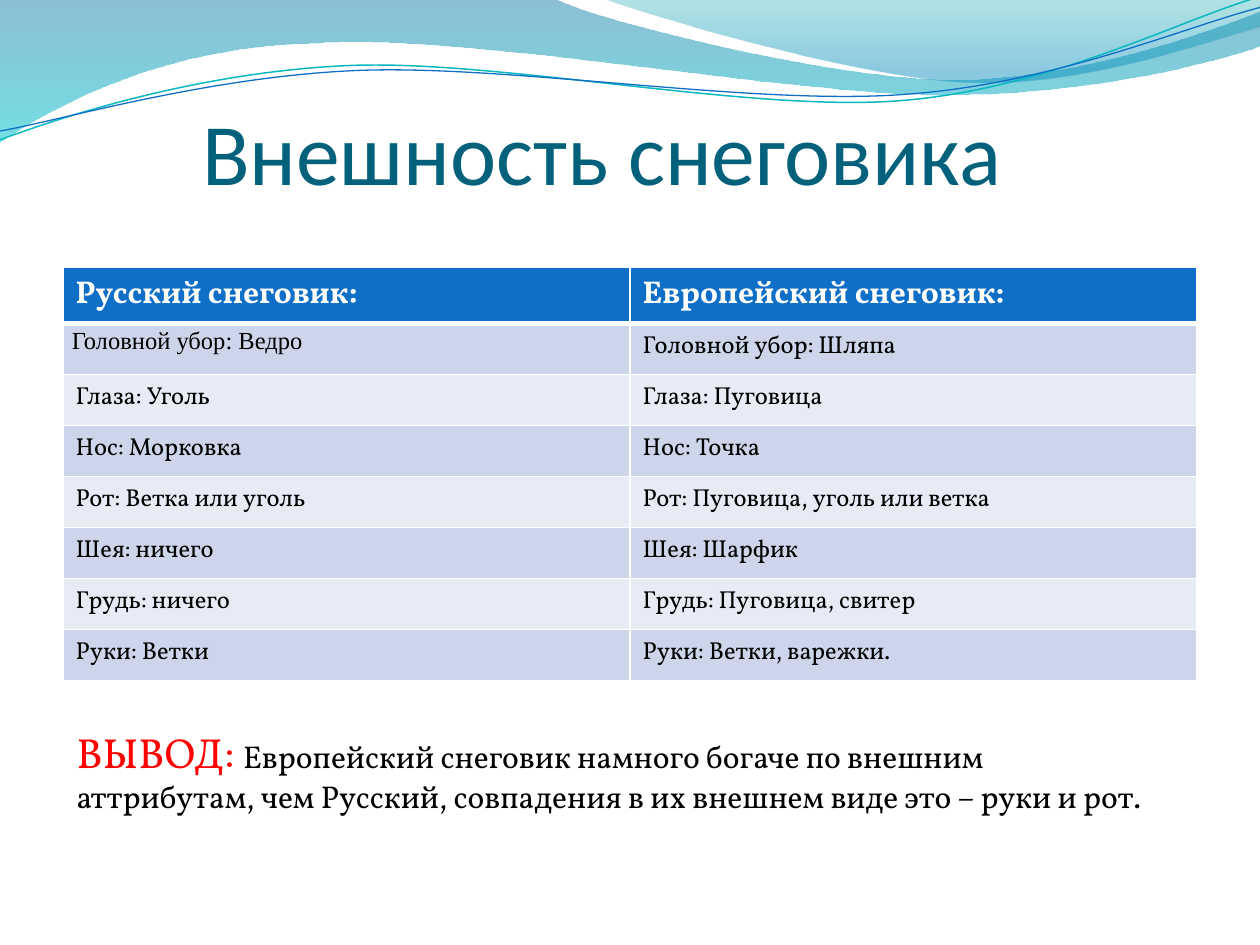
import math
from lxml import etree
from pptx import Presentation, util as u
from pptx.dml.color import RGBColor
from pptx.enum import text
from pptx.oxml import ns

WHITE, BLACK, RED = RGBColor(255, 255, 255), RGBColor(0, 0, 0), RGBColor(255, 0, 0)
TITLE_TEAL, HEADER_BLUE = RGBColor(0x04, 0x61, 0x7B), RGBColor(0x0F, 0x6F, 0xC6)
LINE_TEAL = RGBColor(0x0A, 0xB8, 0xBF)
BANDS = RGBColor(0xCC, 0xD5, 0xEA), RGBColor(0xE7, 0xEB, 0xF5)
DEEP_BLUE, CYAN = RGBColor(0, 0x74, 0xA1), RGBColor(0, 0xC6, 0xCF)
SEA_GREEN, SKY_BLUE = RGBColor(0, 0xA1, 0xA9), RGBColor(0, 0x8B, 0xBF)
FONT = "Vollkorn"

# Content
TITLE = "Внешность снеговика"
SNOWMEN = [
    ("Русский снеговик:", "Европейский снеговик:"),
    ("Головной убор: Ведро", "Головной убор: Шляпа"),
    ("Глаза: Уголь", "Глаза: Пуговица"),
    ("Нос: Морковка", "Нос: Точка"),
    ("Рот: Ветка или уголь", "Рот: Пуговица, уголь или ветка"),
    ("Шея: ничего", "Шея: Шарфик"),
    ("Грудь: ничего", "Грудь: Пуговица, свитер"),
    ("Руки: Ветки", "Руки: Ветки, варежки."),
]
CONCLUSION = [
    ("ВЫВОД: ", 24, RED),
    ("Европейский снеговик намного богаче по внешним аттрибутам, чем Русский, "
     "совпадения в их внешнем виде это – руки и рот.", 18, BLACK),
]

# Waves: steps of one point (line) or three points (curve), in inches
FILLED_WAVES = [
    ([[(0, 0)], [(4.4, -0.01)],
      [(4.76, 0.17), (6.64, 0.63), (7.58, 0.63)], [(8.53, 0.63), (9.58, 0.26), (10, 0.09)],
      [(10.01, 0.36)],
      [(9.83, 0.44), (8.7, 0.76), (7.46, 0.75)], [(6.22, 0.75), (3.82, 0.28), (2.57, 0.34)],
      [(1.29, 0.36), (0.46, 0.83), (-0.01, 1.13)], [(0, 0)]],
     [(0, DEEP_BLUE, 45), (1, CYAN, 55)]),
    ([[(4.79, -0.01)],
      [(5.09, 0.11), (6.82, 0.62), (7.69, 0.65)], [(8.56, 0.69), (9.61, 0.32), (10, 0.21)],
      [(10, 0)], [(4.79, -0.01)]],
     [(0, SEA_GREEN, 30), (0.8, SKY_BLUE, 45)]),
]
LINE_WAVES = [
    ([[(0, 1.11)], [(0.48, 0.93), (1.58, 0.57), (2.77, 0.52)],
      [(3.95, 0.47), (5.93, 0.89), (7.13, 0.8)], [(8.33, 0.71), (9.38, 0.15), (9.98, -0.02)]],
     (4.99, 0.57), LINE_TEAL, 0.85),
    ([[(0, 1.04)], [(0.47, 0.96), (1.64, 0.61), (2.83, 0.56)],
      [(4.03, 0.51), (5.97, 0.84), (7.17, 0.75)], [(8.36, 0.67), (9.41, 0.21), (10, 0.06)]],
     (5, 0.59), HEADER_BLUE, 0.75),
]
TILT = 2.7  # degrees, counter-clockwise


def level(outline, center):
    """Turn a tilted outline back to the horizontal."""
    (cx, cy), angle = center, math.radians(TILT)
    cos, sin = math.cos(angle), math.sin(angle)
    return [[(cx + (x - cx) * cos - (y - cy) * sin, cy + (x - cx) * sin + (y - cy) * cos)
             for x, y in step] for step in outline]


def add_wave(shapes, outline, closed):
    points = [(u.Inches(x), u.Inches(y)) for step in outline for x, y in step]
    builder = shapes.build_freeform(*points[0])
    builder.add_line_segments(points[1:], close=closed)
    wave = builder.convert_to_shape()
    wave.shadow.inherit = False
    # Join each three control points into one curve
    segments = iter(list(wave._element.iter(ns.qn("a:lnTo"))))
    for step in outline[1:]:
        parts = [next(segments) for _ in step]
        if len(parts) == 3:
            curve = etree.Element(ns.qn("a:cubicBezTo"))
            parts[0].addprevious(curve)
            for part in parts:
                curve.append(part[0])
                part.getparent().remove(part)
    return wave


def set_borders(cell, widths):
    for i, (side, width) in enumerate(widths.items()):
        border = etree.Element(ns.qn("a:ln" + side), w=str(u.Pt(width)))
        fill = etree.SubElement(border, ns.qn("a:solidFill"))
        etree.SubElement(fill, ns.qn("a:srgbClr"), val=str(WHITE))
        cell._tc.get_or_add_tcPr().insert(i, border)


def style(run, size, color, font=FONT, bold=False):
    run.font.size, run.font.name, run.font.bold = u.Pt(size), font, bold
    run.font.color.rgb = color


prs = Presentation()
prs.slide_width, prs.slide_height = u.Inches(10), u.Inches(7.5)
slide = prs.slides.add_slide(prs.slide_layouts[5])
shapes = slide.shapes
title = shapes.title

# Wave band along the top
for outline, stops in FILLED_WAVES:
    wave = add_wave(shapes, outline, True)
    wave.line.fill.background()
    wave.fill.gradient()
    wave.fill.gradient_angle = 270
    for stop, (position, color, _) in zip(wave.fill.gradient_stops, stops):
        stop.position, stop.color.rgb = position, color
    colors = wave._element.spPr.iter(ns.qn("a:srgbClr"))
    for color, (_, _, opacity) in zip(colors, stops):
        etree.SubElement(color, ns.qn("a:alpha"), val=str(opacity * 1000))
wave_lines = shapes.add_group_shape()
for outline, center, color, width in LINE_WAVES:
    wave = add_wave(wave_lines.shapes, level(outline, center), False)
    wave.rotation = 360 - TILT
    wave.fill.background()
    wave.line.color.rgb, wave.line.width = color, u.Pt(width)

# Title, in front of the waves
shapes._spTree.append(title._element)
title.left, title.top = u.Inches(0.28), u.Inches(0.36)
title.width, title.height = u.Inches(9), u.Inches(1.25)
frame = title.text_frame
frame.text = TITLE
frame.vertical_anchor = text.MSO_ANCHOR.BOTTOM
frame.margin_left = frame.margin_right = frame.margin_bottom = 0
frame.paragraphs[0].alignment = text.PP_ALIGN.CENTER
style(frame.paragraphs[0].runs[0], 50, TITLE_TEAL, "Calibri")

# Comparison table
table = shapes.add_table(len(SNOWMEN), 2, u.Inches(0.5), u.Inches(2.12),
                         u.Inches(9), u.Inches(3.24)).table
for r, row in enumerate(SNOWMEN):
    for c, label in enumerate(row):
        cell = table.cell(r, c)
        cell.text = label
        cell.fill.solid()
        cell.fill.fore_color.rgb = BANDS[(r - 1) % 2] if r else HEADER_BLUE
        run = cell.text_frame.paragraphs[0].runs[0]
        if r:
            style(run, 14, BLACK)
        else:
            style(run, 18, WHITE, bold=True)
        set_borders(cell, {"L": 1, "R": 1, "T": 3 if r == 1 else 1, "B": 1 if r else 3})

# The first trait is set apart
headwear = table.cell(1, 0)
headwear.margin_left = headwear.margin_right = u.Inches(0.07)
headwear.margin_top = headwear.margin_bottom = 0
line = headwear.text_frame.paragraphs[0]
line.line_spacing, line.space_before = 1.15, u.Pt(4.5)
line.runs[0].font.name = "Times New Roman"

# Conclusion
box = shapes.add_textbox(u.Inches(0.51), u.Inches(5.72), u.Inches(8.74), u.Inches(0.81))
box.text_frame.word_wrap = True
box.text_frame.auto_size = text.MSO_AUTO_SIZE.SHAPE_TO_FIT_TEXT
for words, size, color in CONCLUSION:
    run = box.text_frame.paragraphs[0].add_run()
    run.text = words
    style(run, size, color)

prs.save("out.pptx")
